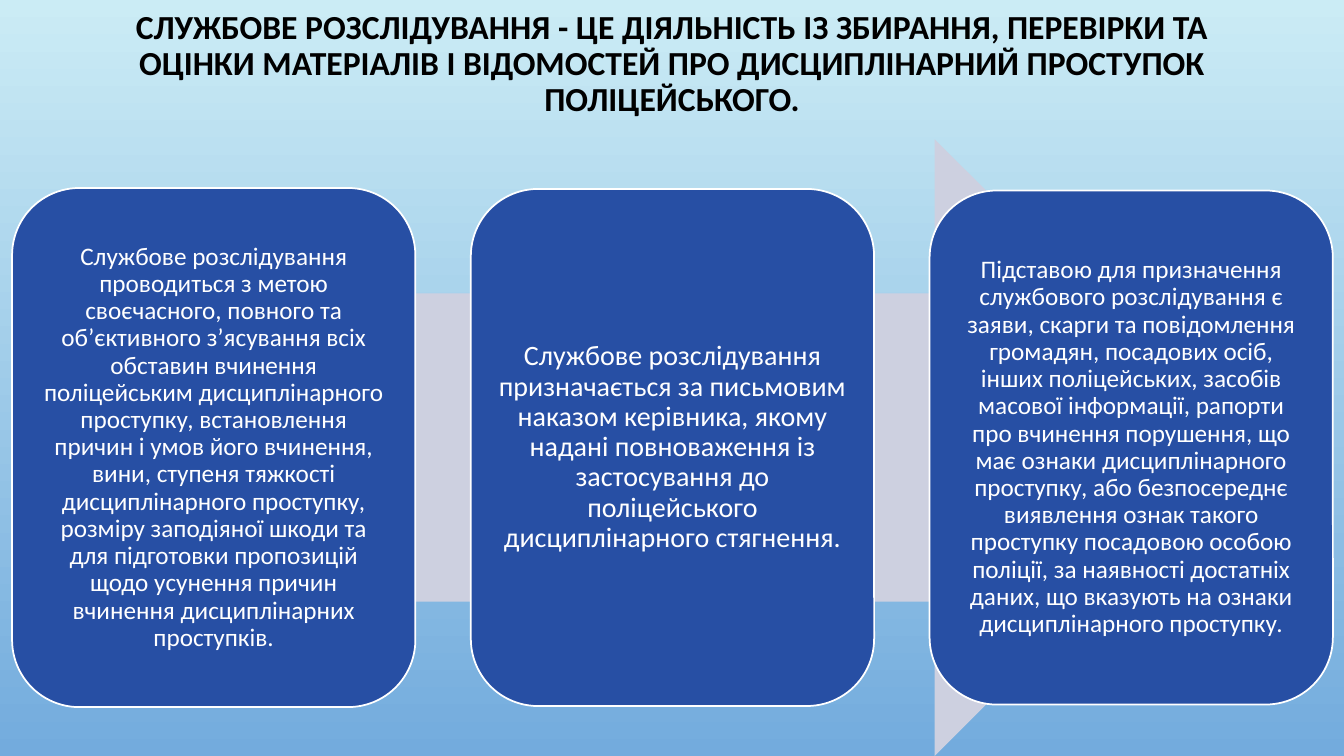
"""Builds a slide defining an official police investigation with three cards over an arrow."""
from lxml.etree import SubElement
from pptx import Presentation
from pptx.dml.color import RGBColor
from pptx.enum.shapes import MSO_SHAPE
from pptx.enum.text import MSO_ANCHOR, MSO_AUTO_SIZE, PP_ALIGN
from pptx.oxml.ns import qn
from pptx.util import Inches, Pt

COLORS = {
    "sky_top": "CBECF5",
    "sky_bottom": "73ABDD",
    "arrow": "CDD0E0",
    "card": "274FA4",
    "white": "FFFFFF",
    "black": "000000",
}
SLIDE_WIDTH, SLIDE_HEIGHT = 13.33, 7.5
MARGIN = 1
ARROW_TOP = 1.38
CARD_LEFT, CARD_PITCH, CARD_WIDTH = 0.12, 4.55, 4
CARD_MIDDLE = (ARROW_TOP + SLIDE_HEIGHT) / 2
TITLE = (
    "СЛУЖБОВЕ РОЗСЛІДУВАННЯ - ЦЕ ДІЯЛЬНІСТЬ ІЗ ЗБИРАННЯ, ПЕРЕВІРКИ ТА ОЦІНКИ "
    "МАТЕРІАЛІВ І ВІДОМОСТЕЙ ПРО ДИСЦИПЛІНАРНИЙ ПРОСТУПОК ПОЛІЦЕЙСЬКОГО."
)
CARDS = [
    (5.15, 18, 0.07,
     "Службове розслідування проводиться з метою своєчасного, повного та об’єктивного "
     "з’ясування всіх обставин вчинення поліцейським дисциплінарного проступку, "
     "встановлення причин і умов його вчинення, вини, ступеня тяжкості дисциплінарного "
     "проступку, розміру заподіяної шкоди та для підготовки пропозицій щодо усунення "
     "причин вчинення дисциплінарних проступків."),
    (5.13, 20, 0.08,
     "Службове розслідування призначається за письмовим наказом керівника, якому надані "
     "повноваження із застосування до поліцейського дисциплінарного стягнення."),
    (5.1, 18, 0.07,
     "Підставою для призначення службового розслідування є заяви, скарги та повідомлення "
     "громадян, посадових осіб, інших поліцейських, засобів масової інформації, рапорти "
     "про вчинення порушення, що має ознаки дисциплінарного проступку, або безпосереднє "
     "виявлення ознак такого проступку посадовою особою поліції, за наявності достатніх "
     "даних, що вказують на ознаки дисциплінарного проступку."),
]


def write_text(shape, text, size, color, bold=False, insets=(0.1, 0.05, 0.1, 0.05)):
    """Fill a shape with one centred paragraph; insets run left, top, right, bottom."""
    frame = shape.text_frame
    frame.word_wrap = True
    frame.auto_size = MSO_AUTO_SIZE.NONE
    frame.vertical_anchor = MSO_ANCHOR.MIDDLE
    frame.margin_left, frame.margin_top, frame.margin_right, frame.margin_bottom = map(Inches, insets)
    para = frame.paragraphs[0]
    para.alignment = PP_ALIGN.CENTER
    para.line_spacing = 0.9
    span = para.add_run()
    span.text = text
    span.font.name = "Calibri"
    span.font.size = Pt(size)
    span.font.bold = bold
    span.font.color.rgb = RGBColor.from_string(COLORS[color])
    span.font.language_id = None
    SubElement(span.font._element, qn("a:cs")).set("typeface", "Calibri")


def add_block(page, kind, left, top, width, height, color):
    """Add a flat preset shape without outline or shadow."""
    block = page.shapes.add_shape(kind, Inches(left), Inches(top), Inches(width), Inches(height))
    block.shadow.inherit = False
    block.fill.solid()
    block.fill.fore_color.rgb = RGBColor.from_string(COLORS[color])
    block.line.fill.background()
    return block


deck = Presentation()
deck.slide_width, deck.slide_height = Inches(SLIDE_WIDTH), Inches(SLIDE_HEIGHT)
page = deck.slides.add_slide(deck.slide_layouts[5])

sky = page.background.fill
sky.gradient()
sky.gradient_angle = 270
for stop, position, color in zip(sky.gradient_stops, (0, 1), ("sky_top", "sky_bottom")):
    stop.position = position
    stop.color.rgb = RGBColor.from_string(COLORS[color])

title = page.shapes.title
title.left, title.top = Inches(MARGIN), Inches(0)
title.width, title.height = Inches(SLIDE_WIDTH - 2 * MARGIN), Inches(1.64)
write_text(title, TITLE, 24, "black", bold=True, insets=(0.1, 0.05, 0.1, 0.41))

add_block(page, MSO_SHAPE.RIGHT_ARROW, MARGIN, ARROW_TOP,
          SLIDE_WIDTH - 2 * MARGIN, SLIDE_HEIGHT - ARROW_TOP, "arrow")

for column, (height, size, inset, text) in enumerate(CARDS):
    card = add_block(page, MSO_SHAPE.ROUNDED_RECTANGLE, CARD_LEFT + column * CARD_PITCH,
                     CARD_MIDDLE - height / 2, CARD_WIDTH, height, "card")
    card.line.color.rgb = RGBColor.from_string(COLORS["white"])
    card.line.width = Pt(1.25)
    write_text(card, text, size, "white", insets=(inset,) * 4)

deck.save("out.pptx")
